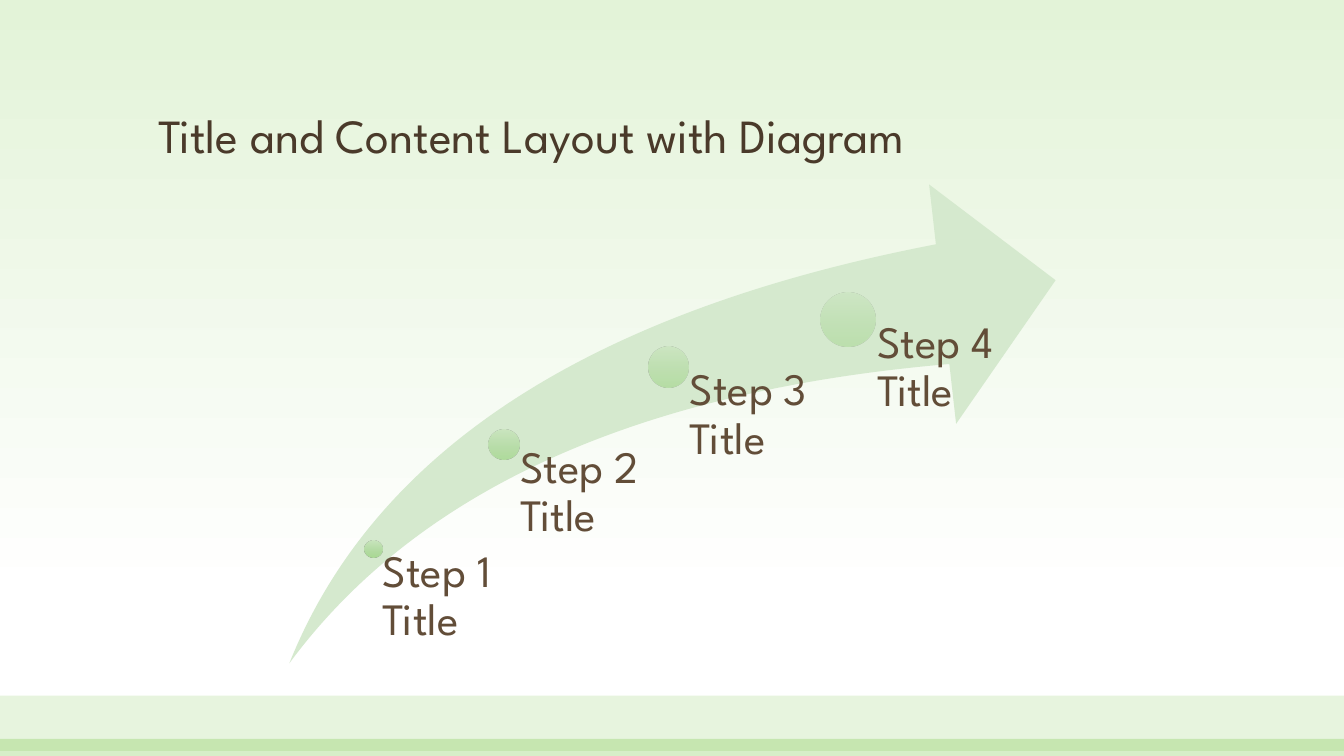
import pptx
import pptx.dml.color
import pptx.enum.shapes
import pptx.enum.text
import pptx.oxml.ns
import pptx.util
import lxml.etree

SCALE = 9144
FONT = "League Spartan"
FORMS = pptx.enum.shapes.MSO_SHAPE
ANCHOR = pptx.enum.text.MSO_ANCHOR
STEPS = [
    ("Step 1 Title", 362, 536, 17, 130),
    ("Step 2 Title", 485, 426, 30, 160),
    ("Step 3 Title", 643, 344, 40, 160),
    ("Step 4 Title", 814, 290, 54, 160),
]


def px(size):
    return pptx.util.Emu(round(size * SCALE))


def rgb(color):
    return pptx.dml.color.RGBColor.from_string(color)


def node(parent, tag, **attrs):
    item = lxml.etree.SubElement(parent, pptx.oxml.ns.qn(tag))
    for key, value in attrs.items():
        item.set(key, str(value))
    return item


def veil(color, alpha):
    node(color, "a:alpha", val=alpha * 1000)


def fade(fill, root, stops):
    fill.gradient()
    fill.gradient_angle = 270
    group = root.find(".//" + pptx.oxml.ns.qn("a:gsLst"))
    for old in list(group):
        group.remove(old)
    for place, color, alpha in stops:
        stop = node(group, "a:gs", pos=place * 1000)
        veil(node(stop, "a:srgbClr", val=color), alpha)


def shape(slide, form, box):
    item = slide.shapes.add_shape(form, *map(px, box))
    item.shadow.inherit = False
    item.line.fill.background()
    return item


def flat(item, color, alpha=100):
    item.fill.solid()
    item.fill.fore_color.rgb = rgb(color)
    if alpha < 100:
        veil(item._element.spPr.find(".//" + pptx.oxml.ns.qn("a:srgbClr")), alpha)


def label(slide, text, box, size, color, inset, anchor):
    frame = slide.shapes.add_textbox(*map(px, box)).text_frame
    frame.word_wrap = True
    frame.vertical_anchor = anchor
    frame.margin_left, frame.margin_top, frame.margin_right, frame.margin_bottom = map(px, inset)
    frame.text = text
    para = frame.paragraphs[0]
    para.line_spacing = 0.9
    font = para.runs[0].font
    font.name = FONT
    font.size = pptx.util.Pt(size)
    font.color.rgb = rgb(color)


def ground(slide, box):
    left, top, width, height = box
    back = slide.background
    stops = [(0, "E3F3D8", 56), (79, "FFFFFF", 100)]
    fade(back.fill, slide._element, stops)
    for drop, tall, alpha in [(690, 55, 17), (733, 17, 28)]:
        band = shape(slide, FORMS.RECTANGLE, (left, top + drop, width, tall))
        flat(band, "72C23C", alpha)


def title(slide, box):
    label(slide, "Title and Content Layout with Diagram", box, 34, "4A3A2A",
          (10, 5, 10, 5), ANCHOR.BOTTOM)


def climb(slide, box):
    left, top, width, height = box
    arrow = shape(slide, FORMS.SWOOSH_ARROW, box)
    arrow.adjustments[0] = 0.25
    arrow.adjustments[1] = 0.25
    flat(arrow, "D5E9CE")
    for index, (text, x, y, size, wide) in enumerate(STEPS):
        dot = shape(slide, FORMS.OVAL, (x, y, size, size))
        alpha = round(90 - index * 40 / 3)
        fade(dot.fill, dot._element.spPr,
             [(0, "C8E5BC", alpha), (50, "B3DBA2", alpha), (100, "A4D78D", alpha)])
        mid = y + size / 2
        label(slide, text, (x + size / 2, mid, wide, top + height - mid), 32,
              "624D38", (round(size * 0.53), 0, 0, 0), ANCHOR.TOP)


def main():
    deck = pptx.Presentation()
    deck.slide_width = px(1333)
    deck.slide_height = px(750)
    slide = deck.slides.add_slide(deck.slide_layouts[6])
    ground(slide, (0, 0, 1333, 750))
    title(slide, (147, 48, 1040, 119))
    climb(slide, (287, 183, 760, 475))
    deck.save("out.pptx")


if __name__ == "__main__":
    main()
